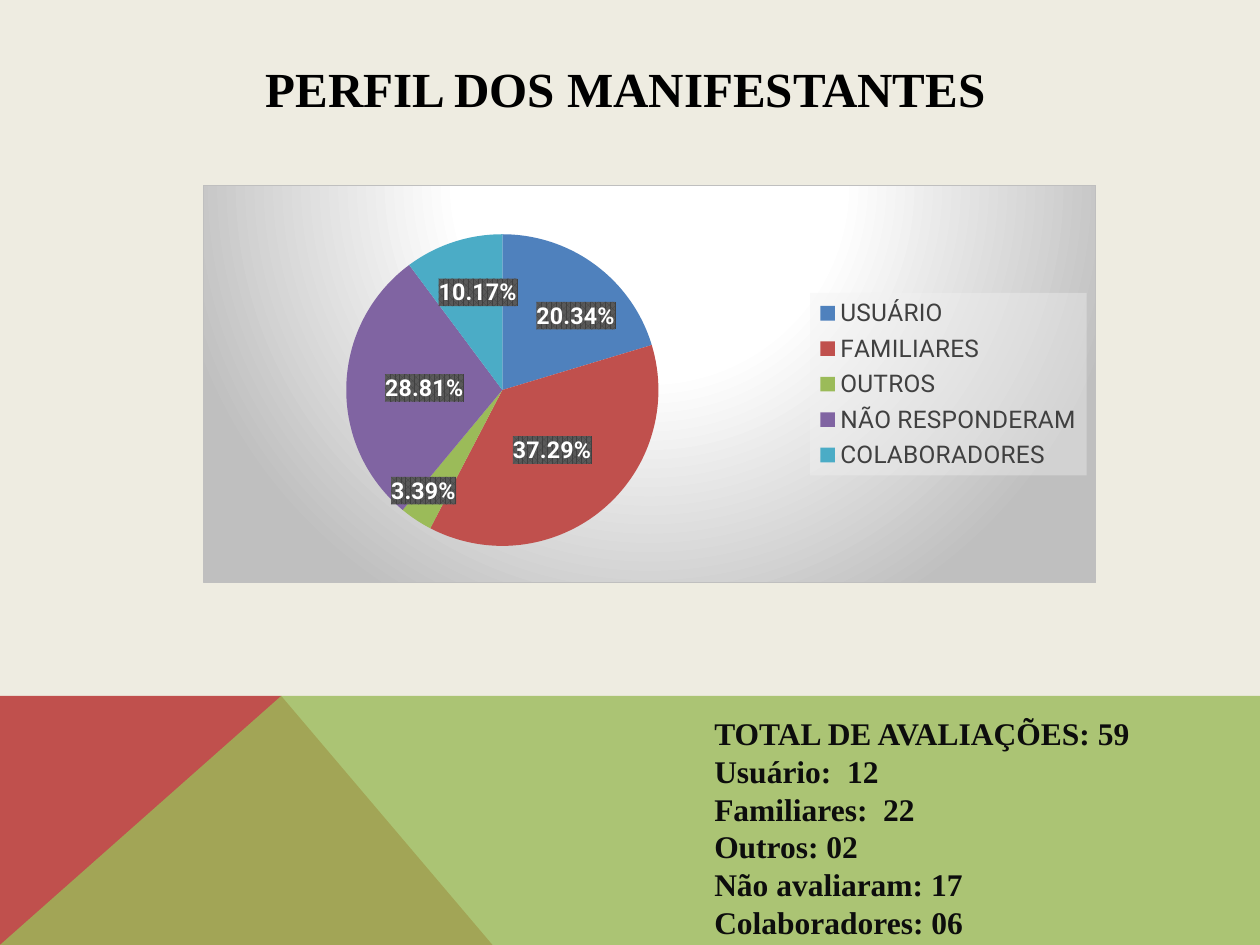
from copy import deepcopy
from dataclasses import dataclass

from pptx import Presentation
from pptx.chart.data import CategoryChartData as Data
from pptx.dml.color import RGBColor as Rgb
from pptx.enum.chart import XL_CHART_TYPE as Kind, XL_LABEL_POSITION as Spot
from pptx.enum.chart import XL_LEGEND_POSITION as Side
from pptx.enum.text import MSO_ANCHOR as Anchor, PP_ALIGN as Align
from pptx.oxml import parse_xml as to_xml
from pptx.oxml.ns import qn
from pptx.util import Cm, Pt

HEX = {
    "page": "EEECE1", "title": "000000", "text": "0D0D0D", "white": "FFFFFF",
    "grey": "BFBFBF", "legend": "404040", "pale": "F2F2F2", "dark": "595959",
    "blue": "4F81BD", "red": "C0504D", "green": "9BBB59",
    "purple": "8064A2", "teal": "4BACC6",
}
SERIF, SANS = "Times New Roman", "Roboto"
NS = ('xmlns:c="http://schemas.openxmlformats.org/drawingml/2006/chart" '
      'xmlns:a="http://schemas.openxmlformats.org/drawingml/2006/main"')


@dataclass
class Box:
    left: float
    top: float
    width: float
    height: float

    def cm(self) -> tuple:
        return Cm(self.left), Cm(self.top), Cm(self.width), Cm(self.height)


@dataclass
class Band:
    points: list
    color: str
    alpha: int


@dataclass
class Slice:
    name: str
    value: float
    color: str
    shift: tuple = ()


FOOT, PEAK = 14.03, (5.67, 14.03)
BANDS = [
    Band([(0, 19.05), (0, FOOT), PEAK, (9.93, 19.05)], "red", 100),
    Band([(0, 19.05), PEAK, (25.4, FOOT), (25.4, 19.05)], "green", 80),
]
SLICES = [
    Slice("USUÁRIO", 20.34, "blue", (0.03, -0.03)),
    Slice("FAMILIARES", 37.29, "red"),
    Slice("OUTROS", 3.39, "green", (-0.04, 0.09)),
    Slice("NÃO RESPONDERAM", 28.81, "purple"),
    Slice("COLABORADORES", 10.17, "teal", (0, -0.06)),
]
TOTALS = ["TOTAL DE AVALIAÇÕES: 59", "Usuário:  12", "Familiares:  22",
          "Outros: 02", "Não avaliaram: 17", "Colaboradores: 06"]


def style(font, face: str, size: float, color: str, bold: bool) -> None:
    font.name, font.size, font.bold = face, Pt(size), bold
    font.color.rgb = Rgb.from_string(HEX[color])


def paint(fill, color: str) -> None:
    fill.solid()
    fill.fore_color.rgb = Rgb.from_string(HEX[color])


def tint(color: str, alpha: int = 100) -> str:
    return f'<a:srgbClr val="{HEX[color]}"><a:alpha val="{alpha * 1000}"/></a:srgbClr>'


def look(body: str):
    return to_xml(f"<c:spPr {NS}>{body}</c:spPr>")


def place(box: Box, inner: bool):
    target = '<c:layoutTarget val="inner"/>' if inner else ""
    return to_xml(
        f'<c:layout {NS}><c:manualLayout>{target}'
        '<c:xMode val="edge"/><c:yMode val="edge"/>'
        f'<c:x val="{box.left}"/><c:y val="{box.top}"/>'
        f'<c:w val="{box.width}"/><c:h val="{box.height}"/>'
        '</c:manualLayout></c:layout>')


def set_place(node, box: Box, spot: int, inner: bool) -> None:
    for old in node.findall(qn("c:layout")):
        node.remove(old)
    node.insert(spot, place(box, inner))


def shift_tags(tags, slices: list) -> None:
    parts = [p for p in tags if p.tag != qn("c:showLeaderLines")]
    moved = [(i, s.shift) for i, s in enumerate(slices) if s.shift]
    for spot, (i, (x, y)) in enumerate(moved):
        tag = to_xml(
            f'<c:dLbl {NS}><c:idx val="{i}"/><c:layout><c:manualLayout>'
            f'<c:x val="{x}"/><c:y val="{y}"/>'
            '</c:manualLayout></c:layout></c:dLbl>')
        tag.extend([deepcopy(p) for p in parts])
        tags.insert(spot, tag)


def draw_band(slide, band: Band) -> None:
    first, *rest = [(Cm(x), Cm(y)) for x, y in band.points]
    path = slide.shapes.build_freeform(*first)
    path.add_line_segments(rest, close=True)
    shape = path.convert_to_shape()
    shape.shadow.inherit = False
    shape.line.fill.background()
    paint(shape.fill, band.color)
    color = shape.fill._xPr.find(qn("a:solidFill"))[0]
    color.append(to_xml(f'<a:alpha {NS} val="{band.alpha * 1000}"/>'))


def draw_title(slide, text: str, box: Box) -> None:
    title = slide.shapes.title
    title.left, title.top, title.width, title.height = box.cm()
    frame = title.text_frame
    frame.vertical_anchor = Anchor.MIDDLE
    para = frame.paragraphs[0]
    para.alignment = Align.CENTER
    run = para.add_run()
    run.text = text
    style(run.font, SERIF, 28, "title", True)


def draw_list(slide, lines: list, box: Box) -> None:
    frame = slide.shapes.add_textbox(*box.cm()).text_frame
    frame.word_wrap = True
    for i, line in enumerate(lines):
        para = frame.add_paragraph() if i else frame.paragraphs[0]
        run = para.add_run()
        run.text = line
        style(run.font, SERIF, 18, "text", True)


def draw_pie(slide, slices: list, box: Box) -> None:
    data = Data(number_format="0.00")
    data.categories = [s.name for s in slices]
    data.add_series("Series 1", [s.value for s in slices])
    chart = slide.shapes.add_chart(Kind.PIE, *box.cm(), data).chart
    chart.has_title = False
    style(chart.font, SANS, 10, "title", False)

    plot = chart.plots[0]
    plot.vary_by_categories = True
    row = plot.series[0]
    for i, item in enumerate(slices):
        form = row.points[i].format
        paint(form.fill, item.color)
        form.line.fill.background()

    tags = row.data_labels
    tags.show_percentage, tags.show_value = True, False
    tags.number_format, tags.number_format_is_linked = "0.00%", False
    tags.position = Spot.CENTER
    style(tags.font, SANS, 13.3, "white", True)
    tags._element.find(qn("c:numFmt")).addnext(look(
        f'<a:pattFill prst="pct75"><a:fgClr>{tint("legend")}</a:fgClr>'
        f'<a:bgClr>{tint("dark")}</a:bgClr></a:pattFill>'))
    shift_tags(tags._element, slices)

    chart.has_legend = True
    key = chart.legend
    key.position, key.include_in_layout = Side.RIGHT, False
    style(key.font, SANS, 14, "legend", False)
    set_place(key._element, Box(0.68, 0.27, 0.31, 0.46), 1, False)
    key._element.find(qn("c:overlay")).addnext(
        look(f'<a:solidFill>{tint("pale", 39)}</a:solidFill>'))

    root = chart._chartSpace
    area = root.find(qn("c:chart")).find(qn("c:plotArea"))
    set_place(area, Box(0.16, 0.12, 0.35, 0.79), 0, True)
    stops = "".join(f'<a:gs pos="{at * 1000}">{tint(color)}</a:gs>'
                    for at, color in [(0, "white"), (39, "white"), (100, "grey")])
    root.find(qn("c:chart")).addnext(look(
        f'<a:gradFill><a:gsLst>{stops}</a:gsLst><a:path path="circle">'
        '<a:fillToRect l="50000" t="-80000" r="50000" b="180000"/></a:path></a:gradFill>'
        f'<a:ln w="{Pt(0.75)}"><a:solidFill>{tint("grey")}</a:solidFill></a:ln>'))


def main() -> None:
    deck = Presentation()
    deck.slide_width, deck.slide_height = Cm(25.4), Cm(19.05)
    slide = deck.slides.add_slide(deck.slide_layouts[5])
    paint(slide.background.fill, "page")
    for band in BANDS:
        draw_band(slide, band)
    draw_title(slide, "PERFIL DOS MANIFESTANTES ", Box(2.29, 1.02, 20.88, 1.52))
    draw_list(slide, TOTALS, Box(14.15, 14.27, 10.11, 6.4))
    draw_pie(slide, SLICES, Box(4.09, 3.73, 18.01, 8.03))
    deck.save("out.pptx")


if __name__ == "__main__":
    main()
